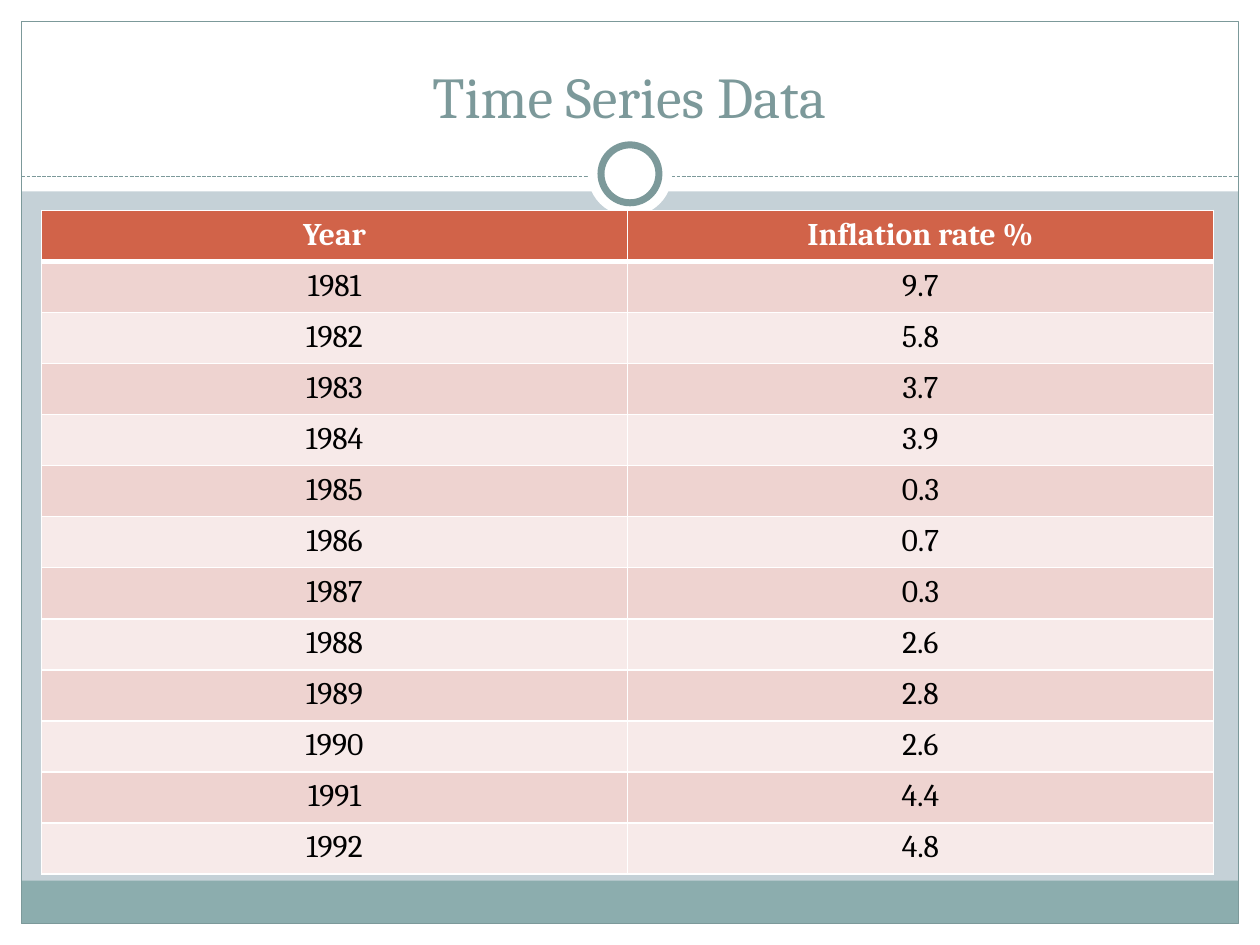
from lxml.etree import SubElement
from pptx import Presentation
from pptx.dml.color import RGBColor
from pptx.enum.dml import MSO_LINE
from pptx.enum.shapes import MSO_CONNECTOR, MSO_SHAPE
from pptx.enum.text import MSO_ANCHOR, PP_ALIGN
from pptx.oxml import parse_xml
from pptx.oxml.ns import nsdecls, qn
from pptx.util import Inches, Pt

FONT = "Cambria"
WHITE, BLACK = "FFFFFF", "000000"
BACKDROP, FOOTER, TEAL = "C5D1D7", "8CADAE", "7C999A"
HEADER, BANDS = "D16349", ("EED3D0", "F7EAE9")

SERIES = [
    ("Year", "Inflation rate %"),
    ("1981", "9.7"),
    ("1982", "5.8"),
    ("1983", "3.7"),
    ("1984", "3.9"),
    ("1985", "0.3"),
    ("1986", "0.7"),
    ("1987", "0.3"),
    ("1988", "2.6"),
    ("1989", "2.8"),
    ("1990", "2.6"),
    ("1991", "4.4"),
    ("1992", "4.8"),
]


def rgb(value):
    return RGBColor.from_string(value)


def write(frame, text, size, color, bold=False):
    frame.text = text
    paragraph = frame.paragraphs[0]
    paragraph.alignment = PP_ALIGN.CENTER
    font = paragraph.runs[0].font
    font.name, font.size, font.bold = FONT, Pt(size), bold
    font.color.rgb = rgb(color)


def add_block(slide, kind, box, fill=None, line=None, width=0.75):
    block = slide.shapes.add_shape(kind, *map(Inches, box))
    block.shadow.inherit = False
    if fill:
        block.fill.solid()
        block.fill.fore_color.rgb = rgb(fill)
    else:
        block.fill.background()
    if line:
        block.line.color.rgb = rgb(line)
        block.line.width = Pt(width)
    else:
        block.line.fill.background()


def add_frame(slide, width, height):
    """White margins, footer band and outline around the content area."""
    margin, header, footer = 0.17, 1.52, 0.34
    inner_width, inner_height = width - 2 * margin, height - 2 * margin
    for box in (
        (0, height - margin, width, margin),
        (0, 0, width, header),
        (0, 0, margin, height),
        (width - margin, 0, margin, height),
    ):
        add_block(slide, MSO_SHAPE.RECTANGLE, box, WHITE)
    footer_box = (margin, height - margin - footer, inner_width, footer)
    add_block(slide, MSO_SHAPE.RECTANGLE, footer_box, FOOTER)
    outline_box = (margin, margin, inner_width, inner_height)
    add_block(slide, MSO_SHAPE.RECTANGLE, outline_box, line=TEAL)


def add_divider(slide, left, right, y):
    """Dashed rule with a ring at its middle."""
    rule = slide.shapes.add_connector(
        MSO_CONNECTOR.STRAIGHT, Inches(left), Inches(y), Inches(right), Inches(y))
    rule.line.color.rgb = rgb(TEAL)
    rule.line.width = Pt(0.75)
    rule.line.dash_style = MSO_LINE.SQUARE_DOT
    SubElement(rule._element.spPr, qn("a:effectLst"))

    center_x, center_y = (left + right) / 2, y - 0.02
    for diameter, line in ((0.67, None), (0.46, TEAL)):
        box = (center_x - diameter / 2, center_y - diameter / 2, diameter, diameter)
        add_block(slide, MSO_SHAPE.OVAL, box, WHITE, line, 4)


def add_title(slide, box, text):
    frame = slide.shapes.add_textbox(*map(Inches, box)).text_frame
    frame.word_wrap = True
    frame.vertical_anchor = MSO_ANCHOR.BOTTOM
    write(frame, text, 33, TEAL)


def set_borders(cell, top, bottom):
    """White borders; the widths of top and bottom are in points."""
    properties = cell._tc.get_or_add_tcPr()
    sides = (("L", 1), ("R", 1), ("T", top), ("B", bottom))
    for position, (side, width) in enumerate(sides):
        properties.insert(position, parse_xml(
            f'<a:ln{side} {nsdecls("a")} w="{Pt(width)}"><a:solidFill>'
            f'<a:srgbClr val="{WHITE}"/></a:solidFill></a:ln{side}>'))


def add_series_table(slide, box, series):
    left, top, width, height = map(Inches, box)
    table = slide.shapes.add_table(
        len(series), len(series[0]), left, top, width, height).table
    for row, values in enumerate(series):
        is_header = row == 0
        for column, value in enumerate(values):
            cell = table.cell(row, column)
            cell.fill.solid()
            cell.fill.fore_color.rgb = rgb(HEADER if is_header else BANDS[(row - 1) % 2])
            write(cell.text_frame, value, 18, WHITE if is_header else BLACK, is_header)
            set_borders(cell, 3 if row == 1 else 1, 3 if is_header else 1)


def main():
    deck = Presentation()
    deck.slide_width, deck.slide_height = Inches(10), Inches(7.5)
    slide = deck.slides.add_slide(deck.slide_layouts[6])
    slide.background.fill.solid()
    slide.background.fill.fore_color.rgb = rgb(BACKDROP)
    add_frame(slide, 10, 7.5)
    add_divider(slide, 0.17, 9.83, 1.4)
    add_series_table(slide, (0.33, 1.67, 9.3, 5.27), SERIES)
    add_title(slide, (0.33, 0.25, 9.33, 0.83), "Time Series Data")
    deck.save("out.pptx")


if __name__ == "__main__":
    main()
